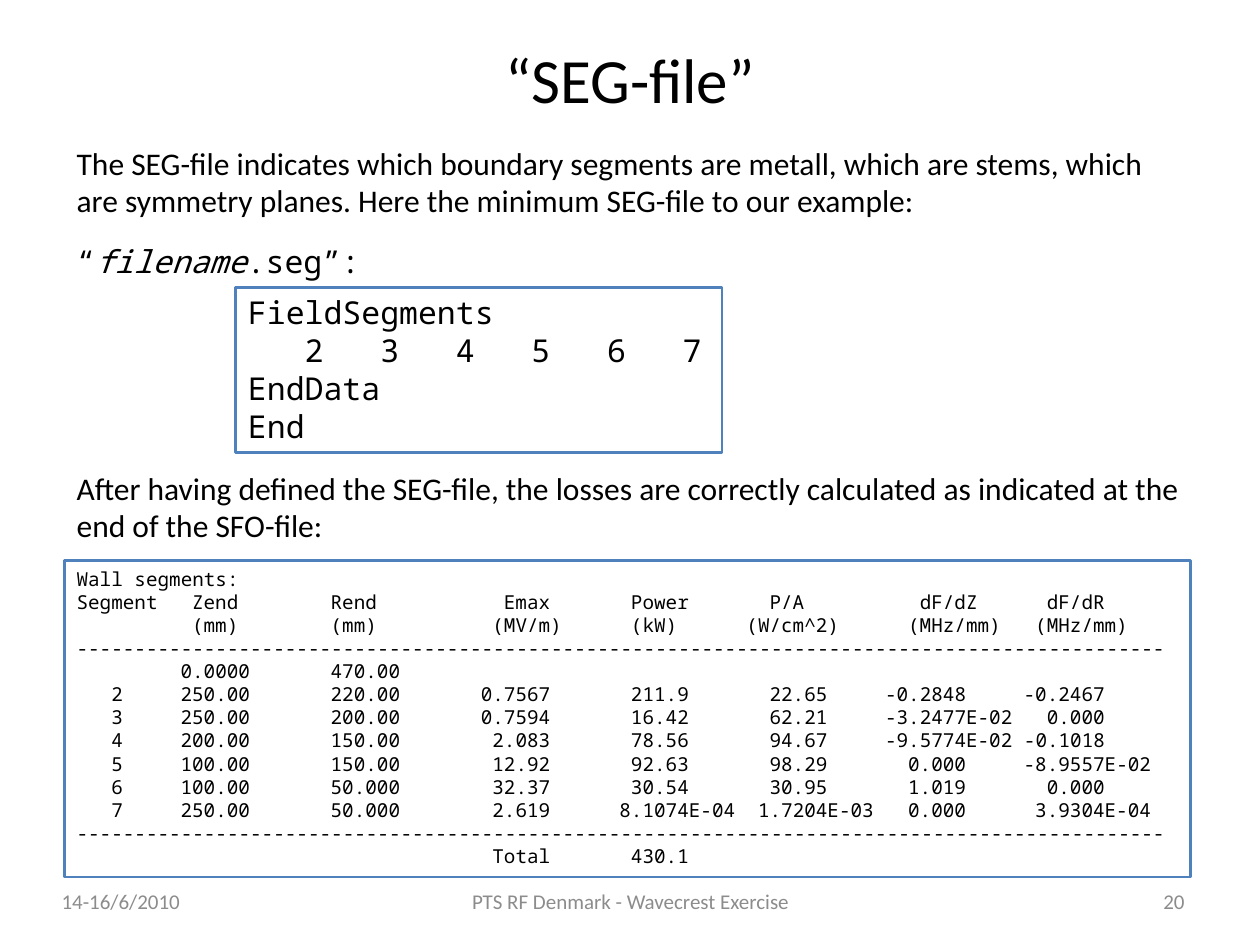
from pptx import Presentation
from pptx import util as u
from pptx.dml.color import RGBColor
from pptx.enum import shapes, text
from pptx.oxml.ns import qn
from lxml import etree

W, H = 10, 7.5
MARGIN = 0.51
COLORS = {"ink": "000000", "frame": "4F81BD", "footer": "8C8C8C"}
SANS, MONO = "Calibri", "Noto Sans Mono"
MONO_WIDTH = 0.6  # character width as a share of the font size
LEFT, CENTER, RIGHT = text.PP_ALIGN.LEFT, text.PP_ALIGN.CENTER, text.PP_ALIGN.RIGHT
MIDDLE = text.MSO_ANCHOR.MIDDLE

SEG_FILE = """\
FieldSegments
   2   3   4   5   6   7
EndData
End"""

RULE = "-" * 94
WALL_LOSSES = f"""\
Wall segments:
Segment   Zend        Rend           Emax       Power       P/A          dF/dZ      dF/dR
          (mm)        (mm)          (MV/m)      (kW)      (W/cm^2)      (MHz/mm)   (MHz/mm)
{RULE}
         0.0000       470.00
   2     250.00       220.00       0.7567       211.9       22.65     -0.2848     -0.2467
   3     250.00       200.00       0.7594       16.42       62.21     -3.2477E-02   0.000
   4     200.00       150.00        2.083       78.56       94.67     -9.5774E-02 -0.1018
   5     100.00       150.00        12.92       92.63       98.29       0.000     -8.9557E-02
   6     100.00       50.000        32.37       30.54       30.95       1.019       0.000
   7     250.00       50.000        2.619      8.1074E-04  1.7204E-03   0.000      3.9304E-04
{RULE}
                                    Total       430.1"""


def inches(box):
    return [u.Inches(v) for v in box]


def add_run(p, words, size, font=SANS, color="ink", italic=False):
    r = p.add_run()
    r.text = words
    r.font.size, r.font.name, r.font.italic = u.Pt(size), font, italic
    r.font.color.rgb = RGBColor.from_string(COLORS[color])


def add_text(s, box, runs, align=LEFT, anchor=text.MSO_ANCHOR.TOP):
    """Add one paragraph; each run is a dict of add_run arguments."""
    tf = s.shapes.add_textbox(*inches(box)).text_frame
    tf.word_wrap, tf.vertical_anchor = True, anchor
    p = tf.paragraphs[0]
    p.alignment = align
    for run in runs:
        add_run(p, **run)


def add_code_line(p, line, size):
    """Write a fixed-width line, with a tab stop wherever a column starts."""
    tabs = etree.Element(qn("a:tabLst"))
    words, end = "", 0
    for chunk in (c.strip() for c in line.split("  ") if c.strip()):
        column = line.index(chunk, end)
        if column > end:
            stop = u.Pt(column * size * MONO_WIDTH)
            etree.SubElement(tabs, qn("a:tab"), pos=str(stop), algn="l")
            words += "\t"
        words += chunk
        end = column + len(chunk)
    if len(tabs):
        p._p.get_or_add_pPr().append(tabs)
    add_run(p, words, size, MONO)


def add_code_box(s, box, code, size):
    sp = s.shapes.add_shape(shapes.MSO_SHAPE.RECTANGLE, *inches(box))
    sp.shadow.inherit = False
    sp.fill.background()
    sp.line.color.rgb = RGBColor.from_string(COLORS["frame"])
    sp.line.width = u.Pt(1.5)
    tf = sp.text_frame
    tf.word_wrap, tf.vertical_anchor = True, text.MSO_ANCHOR.TOP
    for i, line in enumerate(code.splitlines()):
        p = tf.add_paragraph() if i else tf.paragraphs[0]
        p.alignment = LEFT
        add_code_line(p, line, size)


def add_title(s, box, words):
    title = s.shapes.title
    title.left, title.top, title.width, title.height = inches(box)
    tf = title.text_frame
    tf.vertical_anchor = MIDDLE
    tf.paragraphs[0].alignment = CENTER
    add_run(tf.paragraphs[0], words, 36)


def add_footer(s, top, height):
    parts = [
        (0.39, 1.22, "14-16/6/2010", LEFT),
        (1.41, 7.19, "PTS RF Denmark - Wavecrest Exercise", CENTER),
        (8.59, 0.91, "20", RIGHT),
    ]
    for left, width, words, align in parts:
        run = dict(words=words, size=12, color="footer")
        add_text(s, (left, top, width, height), [run], align, MIDDLE)


def add_seg_file(s, left, top):
    intro = ("The SEG-file indicates which boundary segments are metall, which are stems, "
             "which are symmetry planes. Here the minimum SEG-file to our example:")
    add_text(s, (left, top, 8.75, 0.71), [dict(words=intro, size=18)])
    name = [("“", False), ("filename", True), (".seg”:", False)]
    add_text(s, (left, top + 0.78, 2.49, 0.4),
             [dict(words=w, size=18, font=MONO, italic=i) for w, i in name])
    add_code_box(s, (left + 1.36, top + 1.19, 3.86, 1.31), SEG_FILE, 18)


def add_losses(s, left, top):
    intro = ("After having defined the SEG-file, the losses are correctly calculated "
             "as indicated at the end of the SFO-file:")
    add_text(s, (left, top, 9.18, 0.71), [dict(words=intro, size=18)])
    add_code_box(s, (left, top + 0.78, 8.94, 2.51), WALL_LOSSES, 11)


def main():
    prs = Presentation()
    prs.slide_width, prs.slide_height = inches((W, H))
    s = prs.slides.add_slide(prs.slide_layouts.get_by_name("Title Only"))
    add_title(s, (0.05 * W, 0.04 * H, 0.9 * W, 0.64), "“SEG-file”")
    add_footer(s, 6.95, 0.4)
    add_seg_file(s, MARGIN, 1.09)
    add_losses(s, MARGIN, 3.67)
    prs.save("out.pptx")


if __name__ == "__main__":
    main()
